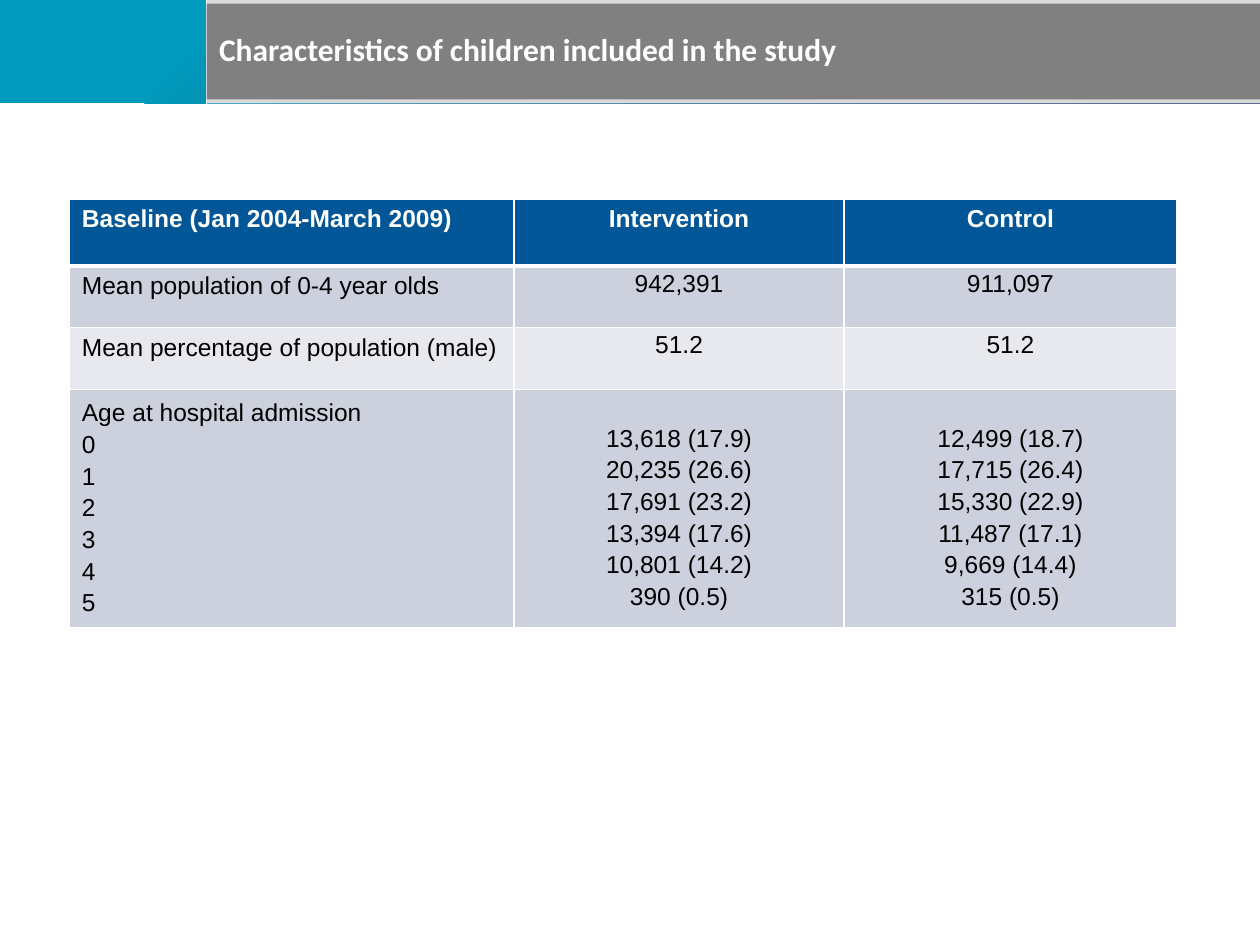
from lxml import etree
from pptx import Presentation
from pptx.dml.color import RGBColor as RGB
from pptx.enum.shapes import MSO_CONNECTOR as Connector, MSO_SHAPE as Shape
from pptx.enum.text import MSO_ANCHOR as Anchor, PP_ALIGN as Align
from pptx.oxml import parse_xml
from pptx.oxml.ns import nsdecls, qn
from pptx.util import Inches, Pt

# Content
TITLE = "Characteristics of children included in the study"
HEADER = ["Baseline (Jan 2004-March 2009)", "Intervention", "Control"]
MEANS = [
    ["Mean population of 0-4 year olds", "942,391", "911,097"],
    ["Mean percentage of population (male)", "51.2", "51.2"],
]
AGES = [
    "Age at hospital admission\n0\n1\n2\n3\n4\n5",
    "13,618 (17.9)\n20,235 (26.6)\n17,691 (23.2)\n13,394 (17.6)\n10,801 (14.2)\n390 (0.5)",
    "12,499 (18.7)\n17,715 (26.4)\n15,330 (22.9)\n11,487 (17.1)\n9,669 (14.4)\n315 (0.5)",
]
ROWS = [HEADER, *MEANS, AGES]


class Theme:
    white, black = "FFFFFF", "000000"
    title_bar, bar_edge = "808080", "D9D9D9"
    header, bands = "005697", ("E7E9EF", "CCD1DD")
    gradient = [(17, "009BBD"), (50, "0E6394"), (100, "1B2A6B")]
    title_font, title_size = "Calibri", Pt(18)
    table_font, table_size = "Arial", Pt(14)
    line_spacing = 1.15


# Layout in inches
WIDTH, BAR_HEIGHT, BAR_LEFT, BAR_EDGE = 10, 0.82, 1.64, 0.03
TABLE_LEFT, TABLE_TOP = 0.55, 1.58
COLUMN_WIDTHS = [3.53, 2.62, 2.64]
ROW_HEIGHTS = [0.53, 0.49, 0.49, 1.89]
LABEL_LINE = 0.25  # height of the age heading, which the figures sit below


def add_bar(slide, left, top, width, height, color=None):
    bar = slide.shapes.add_shape(Shape.RECTANGLE, *map(Inches, (left, top, width, height)))
    bar.shadow.inherit = False
    bar.line.fill.background()
    if color:
        bar.fill.solid()
        bar.fill.fore_color.rgb = RGB.from_string(color)
    return bar


def set_gradient(shape, stops, angle):
    marks = "".join(
        f'<a:gs pos="{position * 1000}"><a:srgbClr val="{color}"/></a:gs>'
        for position, color in stops)
    geometry = shape.element.spPr.find(qn("a:prstGeom"))
    geometry.addnext(parse_xml(
        f'<a:gradFill {nsdecls("a")}><a:gsLst>{marks}</a:gsLst>'
        f'<a:lin ang="{angle * 60000}" scaled="0"/></a:gradFill>'))


def style_text(para, font, size, color, bold):
    para.font.name, para.font.size, para.font.bold = font, size, bold
    para.font.color.rgb = RGB.from_string(color)
    for span in para.runs:
        span.font.name, span.font.size, span.font.bold = font, size, bold
        span.font.color.rgb = RGB.from_string(color)


def set_borders(cell, row):
    properties = cell._tc.get_or_add_tcPr()
    thick_side = {0: "B", 1: "T"}.get(row)
    for position, side in enumerate("LRTB"):
        width = Pt(3 if side == thick_side else 1)
        properties.insert(position, parse_xml(
            f'<a:ln{side} {nsdecls("a")} w="{width}"><a:solidFill>'
            f'<a:srgbClr val="{Theme.white}"/></a:solidFill></a:ln{side}>'))


def fill_cell(cell, row, column, text):
    is_header, is_figure = row == 0, row > 0 and column > 0
    is_ages = row == len(ROWS) - 1
    cell.fill.solid()
    cell.fill.fore_color.rgb = RGB.from_string(
        Theme.header if is_header else Theme.bands[row % 2])
    if is_figure:
        cell.margin_left = cell.margin_right = Inches(0.07)
        cell.margin_top = Inches(LABEL_LINE if is_ages else 0)
        cell.margin_bottom = 0
    cell.text_frame.text = text
    for para in cell.text_frame.paragraphs:
        para.alignment = Align.CENTER if column else Align.LEFT
        if is_figure or is_ages:
            para.line_spacing = Theme.line_spacing
        style_text(para, Theme.table_font, Theme.table_size,
                   Theme.white if is_header else Theme.black, is_header)
    set_borders(cell, row)


def add_title_band(slide):
    accent = add_bar(slide, 0, 0, WIDTH, BAR_HEIGHT)
    set_gradient(accent, Theme.gradient, 45)
    bar_width = WIDTH - BAR_LEFT
    add_bar(slide, BAR_LEFT, 0, bar_width, BAR_HEIGHT, Theme.bar_edge)

    # Divider between accent and title
    divider = slide.shapes.add_connector(
        Connector.STRAIGHT, Inches(BAR_LEFT), 0, Inches(BAR_LEFT), Inches(0.98))
    divider.line.color.rgb = RGB.from_string(Theme.white)
    divider.line.width = Pt(0.5)
    etree.SubElement(divider.element.spPr, qn("a:effectLst"))

    # Title
    title = add_bar(slide, BAR_LEFT, BAR_EDGE, bar_width,
                    BAR_HEIGHT - 2 * BAR_EDGE, Theme.title_bar)
    title.text_frame.text = TITLE
    title.text_frame.word_wrap = True
    title.text_frame.vertical_anchor = Anchor.MIDDLE
    para = title.text_frame.paragraphs[0]
    para.alignment, para.line_spacing = Align.LEFT, 0.9
    style_text(para, Theme.title_font, Theme.title_size, Theme.white, True)


def add_baseline_table(slide):
    table = slide.shapes.add_table(
        len(ROWS), len(HEADER), Inches(TABLE_LEFT), Inches(TABLE_TOP),
        Inches(sum(COLUMN_WIDTHS)), Inches(sum(ROW_HEIGHTS))).table
    for column, width in zip(table.columns, COLUMN_WIDTHS):
        column.width = Inches(width)
    for row, height in zip(table.rows, ROW_HEIGHTS):
        row.height = Inches(height)
    for row, texts in enumerate(ROWS):
        for column, text in enumerate(texts):
            fill_cell(table.cell(row, column), row, column, text)


def main():
    deck = Presentation()
    deck.slide_width, deck.slide_height = Inches(WIDTH), Inches(7.5)
    page = deck.slides.add_slide(deck.slide_layouts[6])
    add_title_band(page)
    add_baseline_table(page)
    deck.save("out.pptx")


if __name__ == "__main__":
    main()
